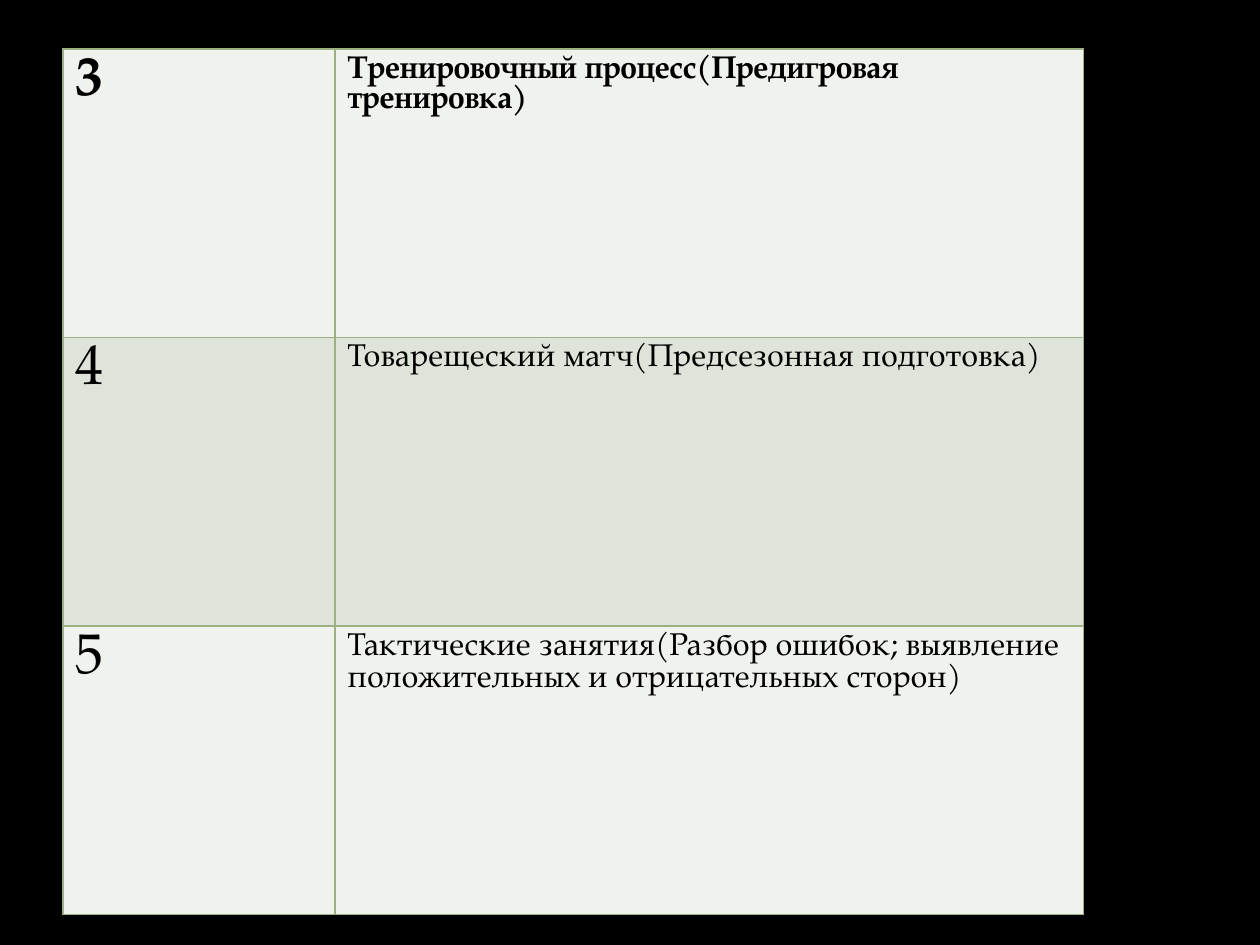
from dataclasses import dataclass

from lxml import etree
from pptx import Presentation
from pptx.dml.color import RGBColor
from pptx.oxml.ns import qn
from pptx.util import Inches, Pt


@dataclass(frozen=True)
class Theme:
    """Colours, font and type sizes of the slide."""
    background: str = "000000"
    text: str = "000000"
    border: str = "9CB084"
    bands: tuple = ("EFF2ED", "DEE4D9")
    font: str = "TeX Gyre Pagella"
    number_size: int = 32
    topic_size: int = 18
    border_width: int = 1


THEME = Theme()
COLUMN_WIDTHS = (2.16, 5.94)
ROW_HEIGHT = 2.29
TOPICS = (
    ("3", "Тренировочный процесс(Предигровая тренировка)"),
    ("4", "Товарещеский матч(Предсезонная подготовка)"),
    ("5", "Тактические занятия(Разбор ошибок; выявление положительных и отрицательных сторон)"),
)


def paint(fill, color):
    """Give a fill one solid colour."""
    fill.solid()
    fill.fore_color.rgb = RGBColor.from_string(color)


def add_borders(cell):
    """Draw a thin line on all four sides of a cell."""
    properties = cell._tc.get_or_add_tcPr()
    for position, side in enumerate(("a:lnL", "a:lnR", "a:lnT", "a:lnB")):
        line = etree.Element(qn(side), w=str(Pt(THEME.border_width)))
        fill = etree.SubElement(line, qn("a:solidFill"))
        etree.SubElement(fill, qn("a:srgbClr"), val=THEME.border)
        properties.insert(position, line)


def fill_cell(cell, text, size, bold, band):
    """Write and format the text of one cell."""
    paint(cell.fill, band)
    add_borders(cell)
    run = cell.text_frame.paragraphs[0].add_run()
    run.text = text
    font_format = {"name": THEME.font, "size": Pt(size), "bold": bold}
    for attribute, value in font_format.items():
        setattr(run.font, attribute, value)
    run.font.color.rgb = RGBColor.from_string(THEME.text)


def add_topic_table(slide):
    """Add the table of numbered training topics."""
    frame = slide.shapes.add_table(
        len(TOPICS), len(COLUMN_WIDTHS), Inches(0.5), Inches(0.39),
        Inches(sum(COLUMN_WIDTHS)), Inches(ROW_HEIGHT * len(TOPICS)))
    table = frame.table
    for column, width in zip(table.columns, COLUMN_WIDTHS):
        column.width = Inches(width)
    sizes = (THEME.number_size, THEME.topic_size)
    for index, topic in enumerate(TOPICS):
        table.rows[index].height = Inches(ROW_HEIGHT)
        band = THEME.bands[index % len(THEME.bands)]
        for cell, text, size in zip(table.rows[index].cells, topic, sizes):
            fill_cell(cell, text, size, index == 0, band)


def main():
    """Build and save the slide."""
    presentation = Presentation()
    presentation.slide_width = Inches(10)
    presentation.slide_height = Inches(7.5)
    slide = presentation.slides.add_slide(presentation.slide_layouts[6])
    paint(slide.background.fill, THEME.background)
    add_topic_table(slide)
    presentation.save("out.pptx")


if __name__ == "__main__":
    main()
